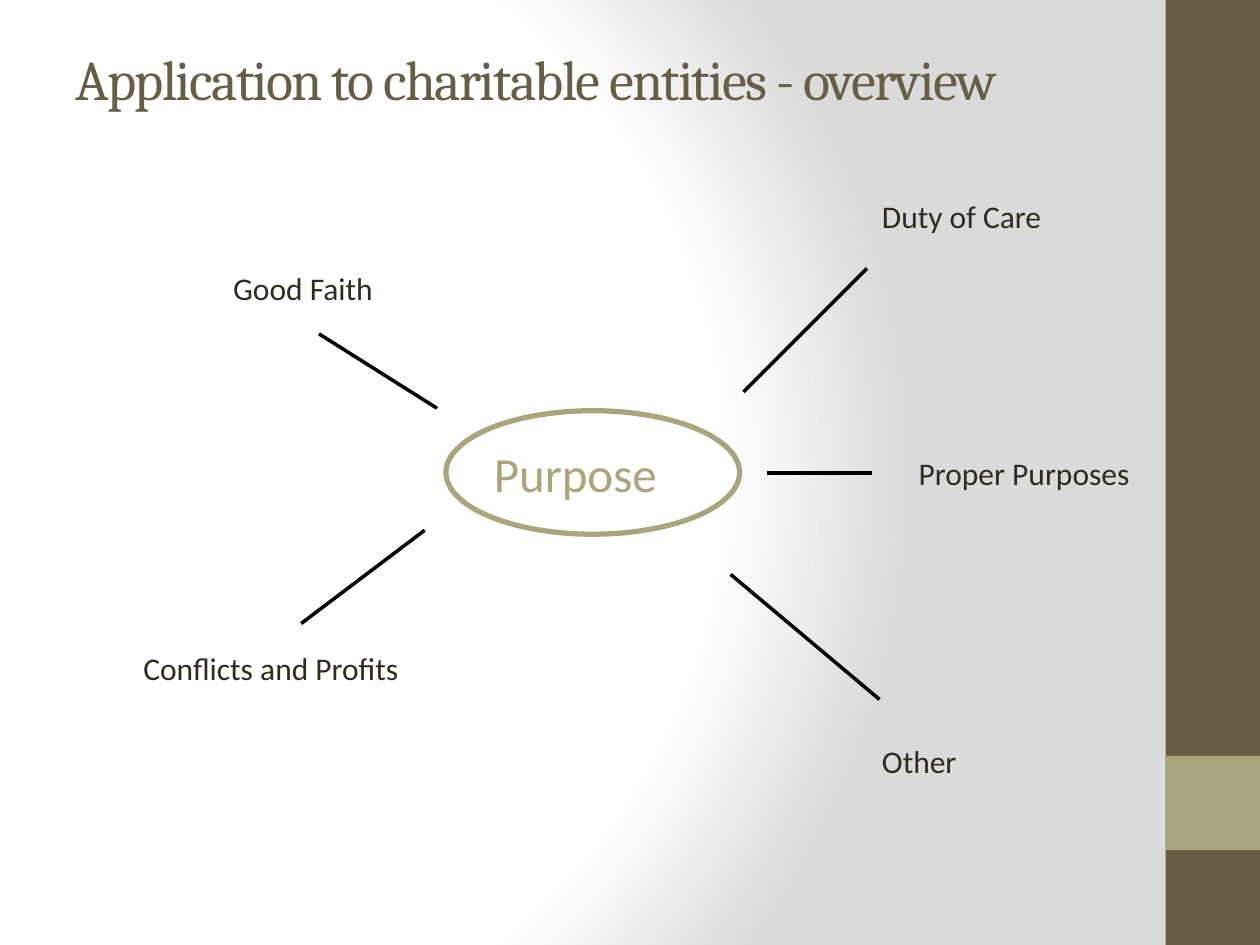
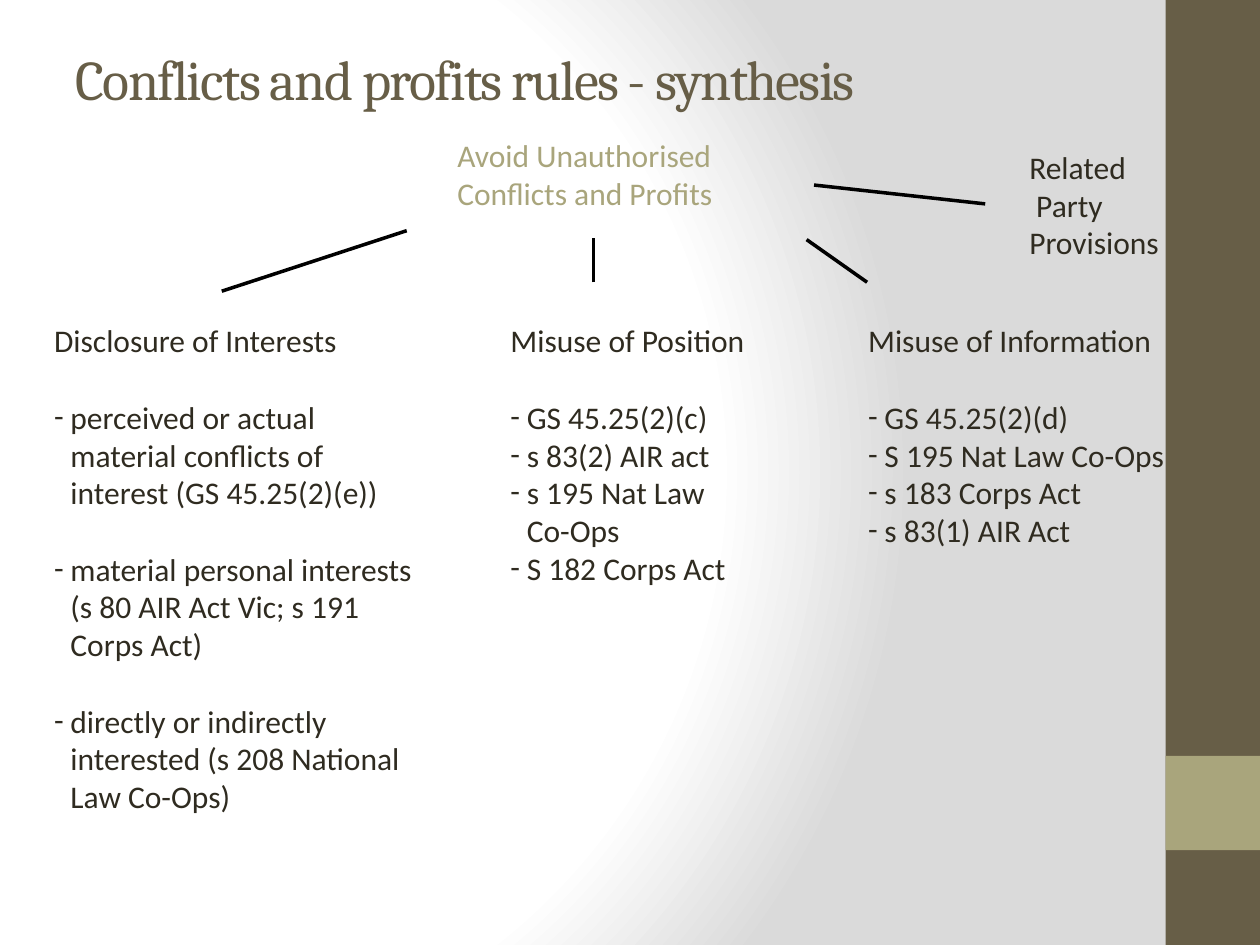
from dataclasses import dataclass

from lxml.etree import SubElement
from pptx import Presentation
from pptx.dml.color import RGBColor
from pptx.enum.shapes import MSO_CONNECTOR, MSO_SHAPE
from pptx.enum.text import MSO_ANCHOR, MSO_AUTO_SIZE, PP_ALIGN
from pptx.oxml.ns import qn
from pptx.util import Cm, Pt


@dataclass(frozen=True)
class Theme:
    brown: str = "675E47"
    sage: str = "A9A57C"
    ink: str = "2F2B20"
    black: str = "000000"
    white: str = "FFFFFF"
    grey: str = "DADADA"
    title_font: str = "Cambria"
    body_font: str = "Calibri"
    title_size: int = 32
    hub_size: int = 28
    body_size: int = 18
    blank_line: int = 22       # points
    text_line: float = 0.77    # cm
    inset: float = 0.1         # cm
    hanging: float = 0.33      # cm


THEME = Theme()
WIDTH, HEIGHT = 25.4, 19.05
TITLE_LEFT, TITLE_TOP, TITLE_WIDTH = 1.27, 0.76, 21.16

# Content: all positions in cm
BANDS = [  # left, top, width, height, colour
    (23.5, 0, 1.9, HEIGHT, THEME.brown),
    (23.5, 15.24, 1.9, 1.9, THEME.sage),
]

OVERVIEW_TITLE = "Application to charitable entities - overview"
HUB = ("Purpose", 8.99, 8.28, 5.92, 2.49)
DUTIES = [  # label, left, top, width, spoke from, spoke to
    ("Duty of Care", 17.68, 3.86, 3.45, (14.99, 7.9), (17.48, 5.41)),
    ("Other", 17.68, 14.86, 1.73, (14.73, 11.58), (17.73, 14.1)),
    ("Proper Purposes", 18.42, 9.04, 4.52, (15.47, 9.53), (17.58, 9.53)),
    ("Good Faith", 4.6, 5.31, 3.07, (8.81, 8.23), (6.43, 6.73)),
    ("Conflicts and Profits", 2.79, 12.98, 5.41, (6.07, 12.57), (8.56, 10.69)),
]

SYNTHESIS_TITLE = "Conflicts and profits rules - synthesis"
RULE = (["Avoid Unauthorised", "Conflicts and Profits"], 9.12, 2.64, 5.41)
RELATED = (["Related", "Party", "Provisions"], 20.65, 2.87, 2.84)
PARTY_INDENT = 0.14
BRANCHES = [
    ((4.47, 5.87), (8.2, 4.65)),
    ((11.96, 5.69), (11.96, 4.8)),
    ((17.48, 5.69), (16.26, 4.83)),
    ((16.41, 3.73), (19.86, 4.11)),
]
COLUMN_TOP = 6.38
COLUMNS = [  # heading, left, width, groups of items, each item a list of lines
    ("Disclosure of Interests", 0.99, 7.54, [
        [["perceived or actual", "material conflicts of",
          "interest (GS 45.25(2)(e))"]],
        [["material personal interests", "(s 80 AIR Act Vic; s 191",
          "Corps Act)"]],
        [["directly or indirectly", "interested (s 208 National",
          "Law Co-Ops)"]],
    ]),
    ("Misuse of Position", 10.19, 4.98, [
        [["GS 45.25(2)(c)"], ["s 83(2) AIR act"], ["s 195 Nat Law", "Co-Ops"],
         ["S 182 Corps Act"]],
    ]),
    ("Misuse of Information", 17.4, 6.25, [
        [["GS 45.25(2)(d)"], ["S 195 Nat Law Co-Ops"], ["s 183 Corps Act"],
         ["s 83(1) AIR Act"]],
    ]),
]


# Shared helpers
def colour(value):
    return RGBColor.from_string(value)


def place(shape, left, top, width, height):
    shape.left, shape.top = Cm(left), Cm(top)
    shape.width, shape.height = Cm(width), Cm(height)


def height_of(line_count):
    return line_count * THEME.text_line + 2 * THEME.inset


def add_span(para, text, size=THEME.body_size, ink=THEME.ink,
             font=THEME.body_font):
    span = para.add_run()
    span.text = text
    span.font.name, span.font.size, span.font.bold = font, Pt(size), False
    span.font.color.rgb = colour(ink)
    return span


def set_frame(frame, anchor, wrap=True):
    frame.word_wrap = wrap
    frame.auto_size = MSO_AUTO_SIZE.NONE
    frame.vertical_anchor = anchor
    frame.margin_left = frame.margin_right = Cm(THEME.inset)
    frame.margin_top = frame.margin_bottom = Cm(THEME.inset)


def set_bullet(para, char=None):
    properties = para._p.get_or_add_pPr()
    hanging = Cm(THEME.hanging) if char else 0
    properties.set("marL", str(hanging))
    properties.set("indent", str(-hanging))
    if char:
        SubElement(properties, qn("a:buFont"), typeface=THEME.body_font)
        SubElement(properties, qn("a:buChar"), char=char)
    else:
        SubElement(properties, qn("a:buNone"))


def add_label(page, lines, left, top, width, ink=THEME.ink):
    box = page.shapes.add_textbox(Cm(left), Cm(top), Cm(width),
                                  Cm(height_of(len(lines))))
    frame = box.text_frame
    set_frame(frame, MSO_ANCHOR.MIDDLE, wrap=False)
    for index, line in enumerate(lines):
        para = frame.add_paragraph() if index else frame.paragraphs[0]
        add_span(para, line, ink=ink)
    return box


def add_line(page, start, end):
    line = page.shapes.add_connector(MSO_CONNECTOR.STRAIGHT,
                                     *(Cm(value) for value in start + end))
    line.line.color.rgb = colour(THEME.black)
    line.line.width = Pt(2)
    SubElement(line._element.spPr, qn("a:effectLst"))


def add_solid(page, preset, left, top, width, height, fill):
    shape = page.shapes.add_shape(preset, Cm(left), Cm(top), Cm(width),
                                  Cm(height))
    shape.shadow.inherit = False
    shape.fill.solid()
    shape.fill.fore_color.rgb = colour(fill)
    shape.line.fill.background()
    return shape


def add_page(deck, layout_name, title_text, title_height):
    page = deck.slides.add_slide(deck.slide_layouts.get_by_name(layout_name))
    title = page.shapes.title
    place(title, TITLE_LEFT, TITLE_TOP, TITLE_WIDTH, title_height)
    frame = title.text_frame
    frame.auto_size = MSO_AUTO_SIZE.NONE
    frame.vertical_anchor = MSO_ANCHOR.TOP
    para = frame.paragraphs[0]
    para.alignment = PP_ALIGN.LEFT
    span = add_span(para, title_text, THEME.title_size, THEME.brown,
                    THEME.title_font)
    span._r.get_or_add_rPr().set("spc", "-100")
    return page


# Master: radial background and side bands
def set_background(master):
    fill = master.background.fill
    fill.solid()
    holder = master.element.find(".//" + qn("p:bgPr"))
    holder.remove(holder.find(qn("a:solidFill")))
    gradient = SubElement(holder, qn("a:gradFill"), rotWithShape="1")
    holder.insert(0, gradient)
    stops = SubElement(gradient, qn("a:gsLst"))
    for percent, tint in [(0, THEME.white), (75, THEME.white),
                          (100, THEME.grey)]:
        stop = SubElement(stops, qn("a:gs"), pos=str(percent * 1000))
        SubElement(stop, qn("a:srgbClr"), val=tint)
    circle = SubElement(gradient, qn("a:path"), path="circle")
    SubElement(circle, qn("a:fillToRect"), l="20000", t="50000", r="100000",
               b="50000")


def move_bands_to_master(page, master):
    tree = master.element.cSld.spTree
    for index, (left, top, width, height, fill) in enumerate(BANDS):
        band = add_solid(page, MSO_SHAPE.RECTANGLE, left, top, width, height,
                         fill)
        tree.insert(2 + index, band._element)


# Slides
def build_overview(deck):
    page = add_page(deck, "Title Only", OVERVIEW_TITLE, 3.18)
    text, *area = HUB
    hub = add_solid(page, MSO_SHAPE.OVAL, *area, THEME.white)
    hub.line.color.rgb = colour(THEME.sage)
    hub.line.width = Pt(3)
    set_frame(hub.text_frame, MSO_ANCHOR.MIDDLE)
    para = hub.text_frame.paragraphs[0]
    para.alignment = PP_ALIGN.LEFT
    add_span(para, text, THEME.hub_size, THEME.sage)
    for label, left, top, width, start, end in DUTIES:
        add_line(page, start, end)
        add_label(page, [label], left, top, width)
    return page


def fill_column(box, heading, left, width, groups):
    line_count = 1 + sum(1 + sum(map(len, group)) for group in groups)
    place(box, left, COLUMN_TOP, width, height_of(line_count))
    frame = box.text_frame
    set_frame(frame, MSO_ANCHOR.TOP)
    para = frame.paragraphs[0]
    para.space_before = Pt(0)
    set_bullet(para)
    add_span(para, heading)
    for group in groups:
        for item_index, lines in enumerate(group):
            para = frame.add_paragraph()
            para.space_before = Pt(0 if item_index else THEME.blank_line)
            set_bullet(para, "-")
            for line_index, line in enumerate(lines):
                if line_index:
                    para.add_line_break()
                add_span(para, line)


def build_synthesis(deck):
    page = add_page(deck, "Comparison", SYNTHESIS_TITLE, 1.88)
    add_label(page, *RULE, ink=THEME.sage)
    related = add_label(page, *RELATED)
    party = related.text_frame.paragraphs[1]
    party._p.get_or_add_pPr().set("marL", str(Cm(PARTY_INDENT)))
    for start, end in BRANCHES:
        add_line(page, start, end)
    bodies = [box for box in page.placeholders
              if box.placeholder_format.idx > 0]
    for box, column in zip(bodies, COLUMNS):
        fill_column(box, *column)
    for spare in bodies[len(COLUMNS):]:
        spare._element.getparent().remove(spare._element)


def main():
    deck = Presentation()
    deck.slide_width, deck.slide_height = Cm(WIDTH), Cm(HEIGHT)
    set_background(deck.slide_master)
    overview = build_overview(deck)
    move_bands_to_master(overview, deck.slide_master)
    build_synthesis(deck)
    deck.save("out.pptx")


if __name__ == "__main__":
    main()
